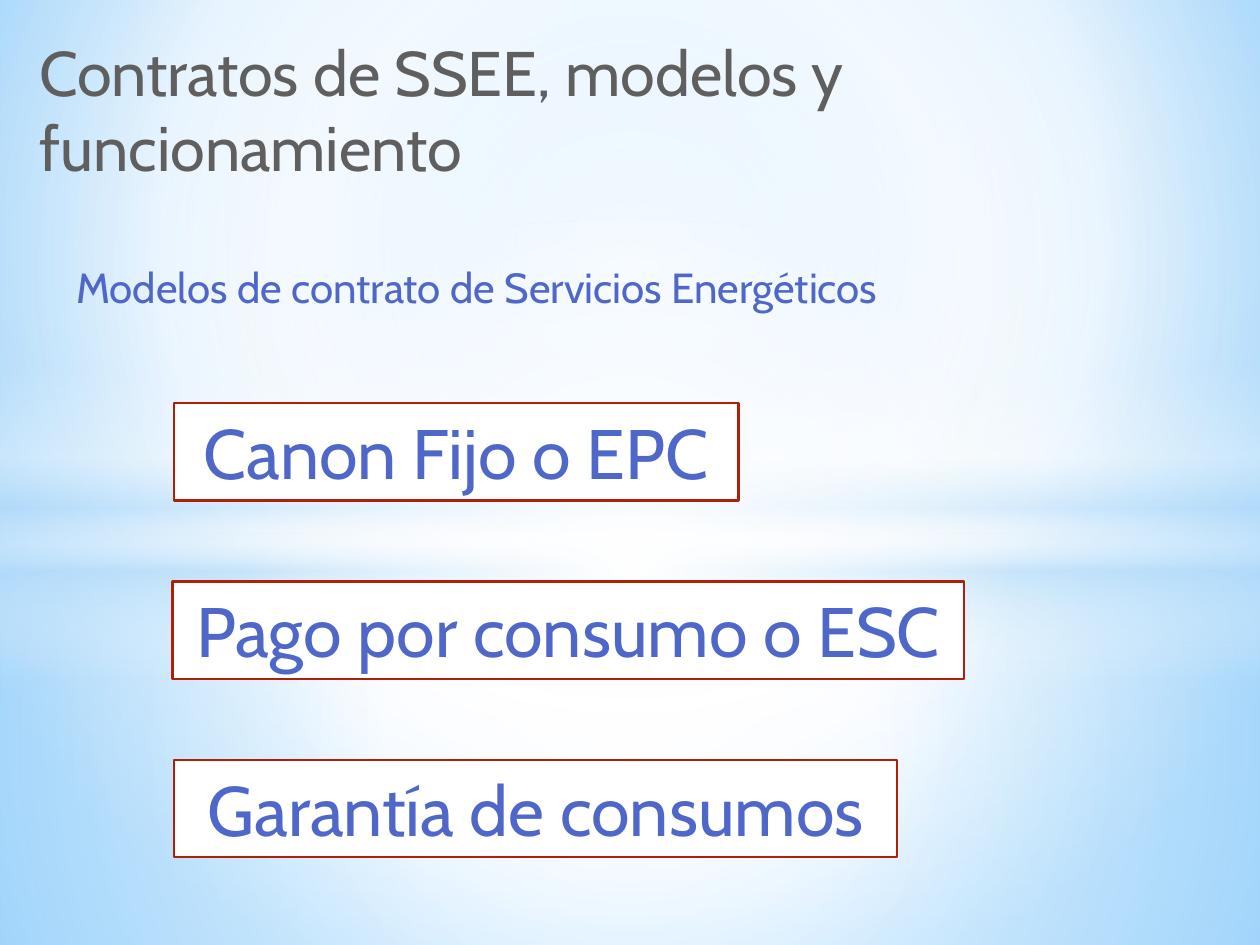
from dataclasses import dataclass
from typing import NamedTuple, Optional

from lxml import etree
from pptx import Presentation
from pptx.dml.color import RGBColor
from pptx.enum import shapes, text
from pptx.oxml import ns
from pptx.util import Pt

FONT, BLUE, GREY, RED, WHITE = "Cabin", "4E67C8", "5F5F5F", "B01F07", "FFFFFF"
SKY = "B4DCFA"
CENTRE = (50, 50, 50, 50)


class Stop(NamedTuple):
    position: int
    color: str
    opacity: int = 100


@dataclass
class Glow:
    """Background layer; without a focus the gradient runs downwards."""
    preset: shapes.MSO_SHAPE
    top: float
    height: float
    stops: list[Stop]
    focus: Optional[tuple] = CENTRE


@dataclass
class Label:
    words: str
    left: float
    top: float
    width: float
    height: float
    size: int
    color: str = BLUE
    framed: bool = False
    inset: Optional[float] = None


BACKDROP = [Stop(0, "9ED5FF"), Stop(60, WHITE), Stop(100, "5BB9FF")]
RECT, OVAL = shapes.MSO_SHAPE.RECTANGLE, shapes.MSO_SHAPE.OVAL
GLOWS = [
    Glow(RECT, 304.5, 235.5, [Stop(0, WHITE, 91), Stop(37, WHITE, 76), Stop(100, SKY, 79)]),
    Glow(RECT, 0, 304.5, [Stop(0, WHITE, 89), Stop(48, WHITE, 62), Stop(100, SKY, 79)]),
    Glow(RECT, 209, 180, [Stop(0, WHITE, 0), Stop(29, WHITE, 30), Stop(45, SKY, 40),
                          Stop(55, WHITE, 26), Stop(65, SKY, 60), Stop(100, WHITE, 0)], None),
    Glow(OVAL, 126, 402, [Stop(0, WHITE), Stop(54, WHITE, 0)]),
]

HEADINGS = [
    Label("Contratos de SSEE, modelos y funcionamiento", 19.5, 16, 673, 62, 36, GREY, inset=3),
    Label("Modelos de contrato de Servicios Energéticos", 36.5, 146, 683.5, 36, 24),
]
MODELS = [("Canon Fijo o EPC", 99.4, 322.6),
          ("Pago por consumo o ESC", 98.6, 452.2),
          ("Garantía de consumos", 99.4, 413.3)]
MODEL_TOP, MODEL_STEP, MODEL_HEIGHT = 230.4, 101.9, 55.6


def rgb(color: str) -> RGBColor:
    return RGBColor.from_string(color)


def gradient(stops: list[Stop], focus: Optional[tuple]):
    """Gradient fill element with opacity and a circular or linear course."""
    def add(parent, tag, **values):
        return etree.SubElement(parent, ns.qn(tag), {k: str(v) for k, v in values.items()})

    fill = etree.Element(ns.qn("a:gradFill"), rotWithShape="1")
    stop_list = add(fill, "a:gsLst")
    for stop in stops:
        mark = add(stop_list, "a:gs", pos=stop.position * 1000)
        tint = add(mark, "a:srgbClr", val=stop.color)
        if stop.opacity < 100:
            add(tint, "a:alpha", val=stop.opacity * 1000)
    if focus:
        course = add(fill, "a:path", path="circle")
        add(course, "a:fillToRect", **{k: v * 1000 for k, v in zip("ltrb", focus)})
    else:
        add(fill, "a:lin", ang=90 * 60000, scaled=0)
    return fill


def swap_solid_fill(parent, fill) -> None:
    parent.replace(parent.find(ns.qn("a:solidFill")), fill)


def draw_glow(slide, glow: Glow, width: int) -> None:
    layer = slide.shapes.add_shape(glow.preset, 0, Pt(glow.top), width, Pt(glow.height))
    layer.shadow.inherit = False
    layer.line.fill.background()
    layer.fill.solid()
    swap_solid_fill(layer.element.spPr, gradient(glow.stops, glow.focus))


def draw_label(slide, label: Label) -> None:
    place = [Pt(v) for v in (label.left, label.top, label.width, label.height)]
    if label.framed:
        box = slide.shapes.add_shape(RECT, *place)
        box.shadow.inherit = False
        box.fill.solid()
        box.fill.fore_color.rgb = rgb(WHITE)
        box.line.color.rgb = rgb(RED)
        box.line.width = Pt(1.25)
    else:
        box = slide.shapes.add_textbox(*place)
    frame = box.text_frame
    fixed = label.inset is not None
    layout = {
        "word_wrap": not label.framed,
        "auto_size": text.MSO_AUTO_SIZE.NONE if fixed else text.MSO_AUTO_SIZE.SHAPE_TO_FIT_TEXT,
        "vertical_anchor": text.MSO_ANCHOR.TOP,
    }
    if fixed:
        layout |= {f"margin_{side}": Pt(label.inset) for side in ("left", "top", "right", "bottom")}
    for name, value in layout.items():
        setattr(frame, name, value)
    paragraph = frame.paragraphs[0]
    paragraph.alignment = text.PP_ALIGN.CENTER if label.framed else text.PP_ALIGN.LEFT
    run = paragraph.add_run()
    run.text = label.words
    for name, value in {"name": FONT, "size": Pt(label.size)}.items():
        setattr(run.font, name, value)
    run.font.color.rgb = rgb(label.color)


def main() -> None:
    deck = Presentation()
    deck.slide_width, deck.slide_height = Pt(720), Pt(540)
    slide = deck.slides.add_slide(deck.slide_layouts[6])

    # Backdrop and its light layers
    slide.background.fill.solid()
    backdrop = slide.element.find(".//" + ns.qn("p:bgPr"))
    swap_solid_fill(backdrop, gradient(BACKDROP, (20, 10, 20, 60)))
    for glow in GLOWS:
        draw_glow(slide, glow, deck.slide_width)

    # Title and subtitle
    for heading in HEADINGS:
        draw_label(slide, heading)

    # Contract models
    for row, (words, left, width) in enumerate(MODELS):
        top = MODEL_TOP + row * MODEL_STEP
        draw_label(slide, Label(words, left, top, width, MODEL_HEIGHT, 40, framed=True))

    deck.save("out.pptx")


if __name__ == "__main__":
    main()
